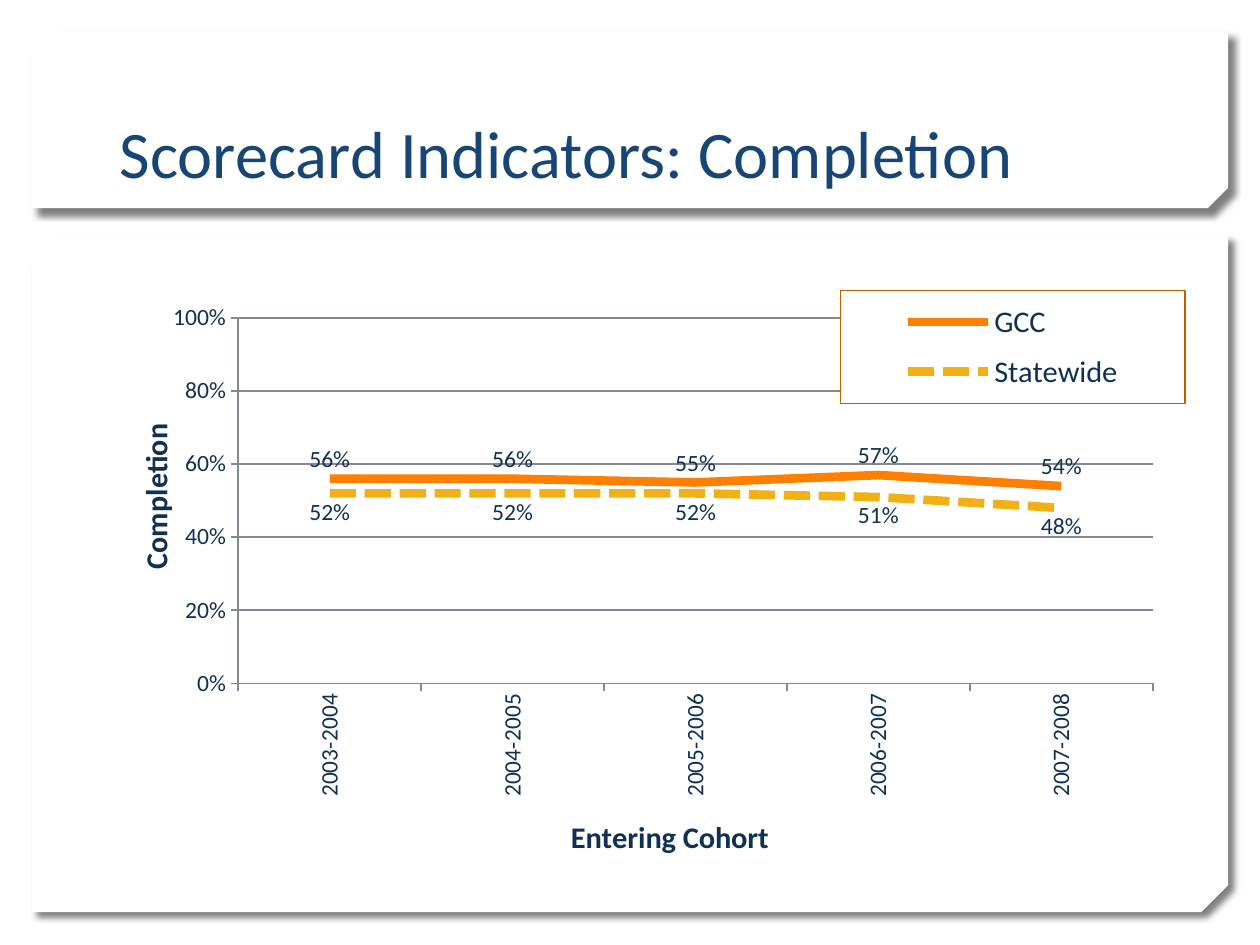
import pptx
import pptx.chart.data
import pptx.dml.color
import pptx.enum.chart
import pptx.enum.dml
import pptx.enum.shapes
import pptx.enum.text
import pptx.oxml
import pptx.oxml.ns
import pptx.util

Cm = pptx.util.Cm
Pt = pptx.util.Pt
qn = pptx.oxml.ns.qn
FONT = "Calibri"
NAVY = "103154"
GRID = "868695"
CHART_NS = 'xmlns:c="http://schemas.openxmlformats.org/drawingml/2006/chart"'
DRAW_NS = 'xmlns:a="http://schemas.openxmlformats.org/drawingml/2006/main"'


def color(hex_code):
    """Turn a hex string into an RGB colour."""
    return pptx.dml.color.RGBColor.from_string(hex_code)


def style_font(font, size, hex_code=NAVY, bold=False):
    """Set face, size, colour and weight of a font."""
    font.name = FONT
    font.size = Pt(size)
    font.bold = bold
    font.color.rgb = color(hex_code)


def manual_layout(x, y, width=None, height=None, inner=False):
    """Return a chart layout element in fractions of the chart area."""
    target = '<c:layoutTarget val="inner"/>' if inner else ""
    modes = '<c:xMode val="edge"/><c:yMode val="edge"/>'
    values = {"x": x, "y": y, "w": width, "h": height}
    places = "".join(f'<c:{key} val="{value}"/>' for key, value in values.items() if value is not None)
    return pptx.oxml.parse_xml(
        f"<c:layout {CHART_NS}><c:manualLayout>{target}{modes}{places}</c:manualLayout></c:layout>")


def replace_layout(parent, index, layout):
    """Put a layout at an index of a chart element in place of any other."""
    for old in parent.findall(qn("c:layout")):
        parent.remove(old)
    parent.insert(index, layout)


def add_panel(slide, box, snip):
    """Add a white panel with a snipped lower corner and a soft shadow."""
    panel = slide.shapes.add_shape(pptx.enum.shapes.MSO_SHAPE.SNIP_2_DIAG_RECTANGLE, *box)
    panel.adjustments[0] = 0
    panel.adjustments[1] = snip
    panel.fill.solid()
    panel.fill.fore_color.rgb = color("FFFFFF")
    panel.line.fill.background()
    panel.shadow.inherit = False
    properties = panel._element.spPr
    properties.find(qn("a:xfrm")).set("flipV", "1")
    properties.find(qn("a:effectLst")).append(pptx.oxml.parse_xml(
        f'<a:outerShdw {DRAW_NS} blurRad="{Pt(4)}" dist="{Pt(5)}" dir="2700000" algn="tl" rotWithShape="0">'
        '<a:srgbClr val="000000"><a:alpha val="50000"/></a:srgbClr></a:outerShdw>'))


def add_heading(slide, box):
    """Place the slide title on its own panel."""
    left, top, width, height = box
    add_panel(slide, box, 0.117)
    heading = slide.shapes.title
    slide.shapes._spTree.append(heading._element)
    heading.left, heading.top = left + Cm(1.52), top + Cm(0.18)
    heading.width, heading.height = width - Cm(3.07), height - Cm(0.38)
    heading.text_frame.text = "Scorecard Indicators: Completion"
    heading.text_frame.vertical_anchor = pptx.enum.text.MSO_ANCHOR.BOTTOM
    heading.text_frame.auto_size = pptx.enum.text.MSO_AUTO_SIZE.NONE
    paragraph = heading.text_frame.paragraphs[0]
    paragraph.alignment = pptx.enum.text.PP_ALIGN.LEFT
    style_font(paragraph.runs[0].font, 38, "174576")


def style_axis(axis, caption, x, y):
    """Format an axis and place its caption."""
    axis.major_tick_mark = pptx.enum.chart.XL_TICK_MARK.OUTSIDE
    axis.minor_tick_mark = pptx.enum.chart.XL_TICK_MARK.NONE
    axis.format.line.color.rgb = color(GRID)
    axis.format.line.width = Pt(1)
    style_font(axis.tick_labels.font, 13.5)
    axis.axis_title.text_frame.text = caption
    style_font(axis.axis_title.text_frame.paragraphs[0].runs[0].font, 17.4, bold=True)
    replace_layout(axis.axis_title._element, 1, manual_layout(x, y))


def style_series(series, hex_code, position, dash):
    """Format a line and its value labels."""
    series.smooth = False
    series.marker.style = pptx.enum.chart.XL_MARKER_STYLE.NONE
    series.format.line.color.rgb = color(hex_code)
    series.format.line.width = Pt(5)
    series.format.line.dash_style = dash
    labels = series.data_labels
    labels.show_value = True
    labels.number_format = "0%"
    labels.number_format_is_linked = False
    labels.position = position
    style_font(labels.font, 13.5)


def style_legend(chart):
    """Place a framed legend over the upper right of the plot."""
    chart.has_legend = True
    legend = chart.legend
    legend.position = pptx.enum.chart.XL_LEGEND_POSITION.RIGHT
    legend.include_in_layout = False
    style_font(legend.font, 17.4)
    replace_layout(legend._element, 1, manual_layout(0.68, 0, 0.3, 0.2))
    legend._element.find(qn("c:txPr")).addprevious(pptx.oxml.parse_xml(
        f'<c:spPr {CHART_NS} {DRAW_NS}><a:solidFill><a:srgbClr val="FFFFFF"/></a:solidFill>'
        '<a:ln w="9525"><a:solidFill><a:srgbClr val="BF5F00"/></a:solidFill></a:ln></c:spPr>'))


def add_completion_chart(slide, box):
    """Place the completion chart on its own panel."""
    left, top, width, height = box
    add_panel(slide, box, 0.04)
    completion = pptx.chart.data.CategoryChartData(number_format="0%")
    completion.categories = [f"{year}-{year + 1}" for year in range(2003, 2008)]
    completion.add_series("GCC", (0.56, 0.56, 0.55, 0.57, 0.54))
    completion.add_series("Statewide", (0.52, 0.52, 0.52, 0.51, 0.48))
    chart = slide.shapes.add_chart(
        pptx.enum.chart.XL_CHART_TYPE.LINE, left + Cm(0.58), top + Cm(1.09),
        width - Cm(0.99), height - Cm(2.03), completion).chart
    chart.has_title = False
    style_font(chart.font, 17.4)
    plot = chart.plots[0]
    plot.vary_by_categories = False
    replace_layout(chart._chartSpace.chart.plotArea, 0,
                   manual_layout(0.155, 0.049, 0.797, 0.645, inner=True))

    cohorts, rates = chart.category_axis, chart.value_axis
    style_axis(cohorts, "Entering Cohort", 0.44, 0.92)
    cohorts.tick_labels.font
    cohorts._element.find(qn("c:txPr")).find(qn("a:bodyPr")).set("rot", "-5400000")
    style_axis(rates, "Completion", 0.06, 0.23)
    rates.minimum_scale, rates.maximum_scale, rates.major_unit = 0, 1, 0.2
    rates.tick_labels.number_format = "0%"
    rates.tick_labels.number_format_is_linked = False
    rates.has_major_gridlines = True
    rates.major_gridlines.format.line.color.rgb = color(GRID)
    rates.major_gridlines.format.line.width = Pt(1)

    label_position = pptx.enum.chart.XL_LABEL_POSITION
    dashes = pptx.enum.dml.MSO_LINE
    college, statewide = plot.series
    style_series(college, "FF7F01", label_position.ABOVE, dashes.SOLID)
    style_series(statewide, "F1B015", label_position.BELOW, dashes.SQUARE_DOT)
    style_legend(chart)


def main():
    """Build the slide and save it."""
    deck = pptx.Presentation()
    deck.slide_width, deck.slide_height = Cm(25.4), Cm(19.05)
    slide = deck.slides.add_slide(deck.slide_layouts[5])
    margin = Cm(0.64)
    panel_width = deck.slide_width - 2 * margin
    add_completion_chart(slide, (margin, Cm(4.75), panel_width, Cm(13.64)))
    add_heading(slide, (margin, margin, panel_width, Cm(3.56)))
    deck.save("out.pptx")


if __name__ == "__main__":
    main()
